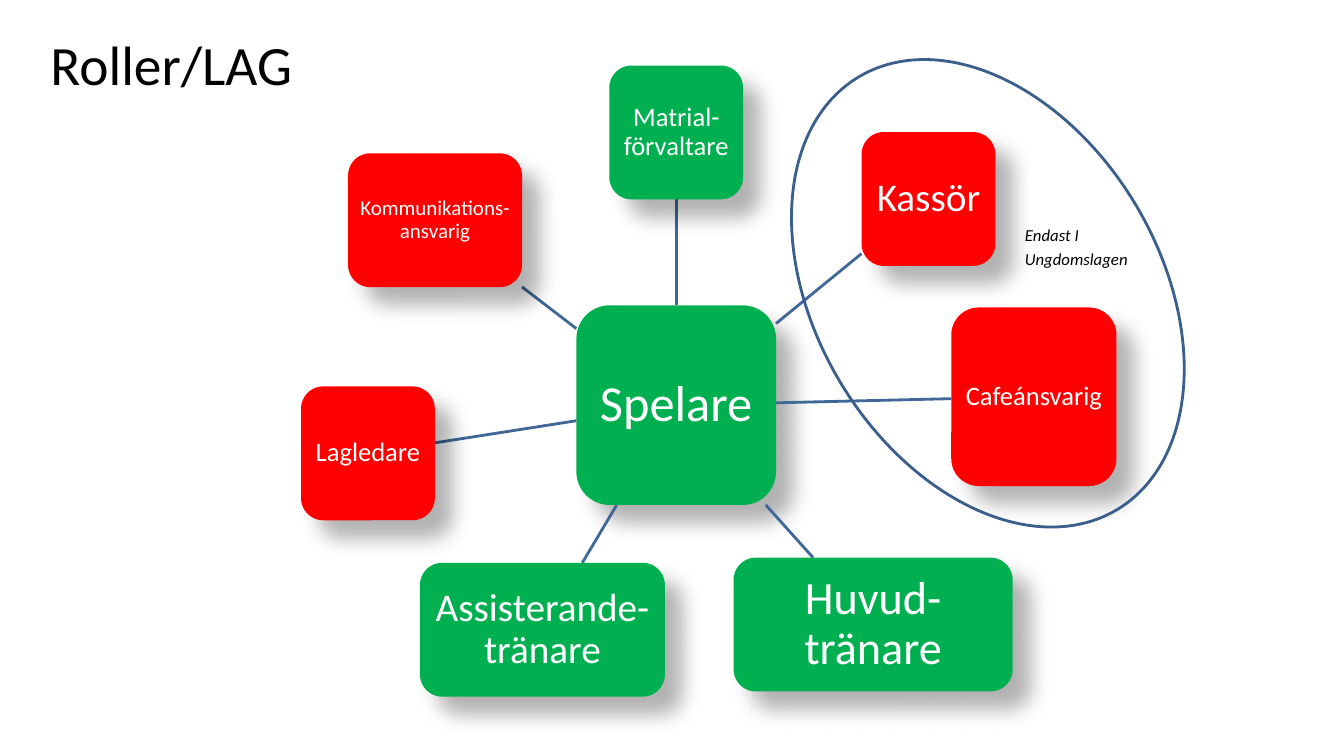
from lxml import etree
from pptx import Presentation
from pptx.dml.color import RGBColor
from pptx.enum import shapes, text
from pptx.oxml import parse_xml
from pptx.oxml.ns import nsdecls, qn
from pptx.util import Pt

COLORS = {
    "green": "00B050",
    "red": "FF0000",
    "link": "3F6797",
    "ring": "3A5F8C",
    "white": "FFFFFF",
    "black": "000000",
}
SHADOW = (
    f'<a:effectLst {nsdecls("a")}>'
    f'<a:outerShdw blurRad="{Pt(15)}" dist="{Pt(18)}" dir="2700000" algn="tl" rotWithShape="0">'
    f'<a:srgbClr val="{COLORS["black"]}"><a:alpha val="30000"/></a:srgbClr>'
    "</a:outerShdw></a:effectLst>"
)


def add_words(paragraph, words, size, color, italic=None):
    run = paragraph.add_run()
    run.text = words
    run.font.name = "Calibri"
    run.font.size = Pt(size)
    run.font.italic = italic
    run.font.color.rgb = RGBColor.from_string(COLORS[color])


def add_role(words, left, top, width, height, size, color):
    role = slide.shapes.add_shape(
        shapes.MSO_SHAPE.ROUNDED_RECTANGLE, Pt(left), Pt(top), Pt(width), Pt(height)
    )
    role.fill.solid()
    role.fill.fore_color.rgb = RGBColor.from_string(COLORS[color])
    role.line.fill.background()
    role._element.spPr.append(parse_xml(SHADOW))
    frame = role.text_frame
    frame.word_wrap = True
    frame.vertical_anchor = text.MSO_ANCHOR.MIDDLE
    inset = Pt(size / 5)
    frame.margin_left = frame.margin_right = inset
    frame.margin_top = frame.margin_bottom = inset
    label = frame.paragraphs[0]
    label.alignment = text.PP_ALIGN.CENTER
    label.line_spacing = 0.9
    add_words(label, words, size, "white")


presentation = Presentation()
presentation.slide_width = Pt(960)
presentation.slide_height = Pt(540)
slide = presentation.slides.add_slide(presentation.slide_layouts[5])

heading = slide.shapes.title
heading.left, heading.top, heading.width, heading.height = Pt(28.8), Pt(0), Pt(193.7), Pt(90)
heading.text_frame.vertical_anchor = text.MSO_ANCHOR.MIDDLE
heading.text_frame.paragraphs[0].alignment = text.PP_ALIGN.LEFT
add_words(heading.text_frame.paragraphs[0], "Roller/LAG", 39.6, "black")

center_x, center_y, player_side = 483, 289.4, 142.6
add_role(
    "Spelare", center_x - player_side / 2, center_y - player_side / 2,
    player_side, player_side, 36, "green",
)

role_height = 95.6
roles = [
    ("Matrial-förvaltare", 435.2, 46.8, 95.6, role_height, 19, "green"),
    ("Kassör", 615.4, 94.3, 95.6, role_height, 28, "red"),
    ("Cafeánsvarig", 679.5, 219.6, 118, 127.6, 19, "red"),
    ("Huvud-tränare", 524, 398.3, 199.4, role_height, 33, "green"),
    ("Assisterande-tränare", 300, 402, 175, role_height, 28, "green"),
    ("Lagledare", 215, 276, 95.6, role_height, 19, "red"),
    ("Kommunikations-ansvarig", 248.6, 109.5, 124.3, role_height, 15, "red"),
]
for words, left, top, width, height, size, color in roles:
    dx = left + width / 2 - center_x
    dy = top + height / 2 - center_y
    reach_x, reach_y = max(abs(dx), 0.01), max(abs(dy), 0.01)
    start = min(player_side / 2 / reach_x, player_side / 2 / reach_y)
    end = 1 - min(width / 2 / reach_x, height / 2 / reach_y)
    link = slide.shapes.add_connector(
        shapes.MSO_CONNECTOR.STRAIGHT,
        Pt(center_x + dx * start), Pt(center_y + dy * start),
        Pt(center_x + dx * end), Pt(center_y + dy * end),
    )
    link.line.color.rgb = RGBColor.from_string(COLORS["link"])
    link.line.width = Pt(2)
    etree.SubElement(link._element.spPr, qn("a:effectLst"))
    add_role(words, left, top, width, height, size, color)

youth_ring = slide.shapes.add_shape(
    shapes.MSO_SHAPE.OVAL, Pt(582.5), Pt(29.5), Pt(246.2), Pt(360)
)
youth_ring.rotation = 149.2
youth_ring.shadow.inherit = False
youth_ring.fill.background()
youth_ring.line.color.rgb = RGBColor.from_string(COLORS["ring"])
youth_ring.line.width = Pt(2)

youth_note = slide.shapes.add_textbox(Pt(725), Pt(157), Pt(187.2), Pt(176.4)).text_frame
youth_note.word_wrap = True
add_words(youth_note.paragraphs[0], "Endast I", 12, "black", True)
second_line = youth_note.add_paragraph()
second_line.space_before = Pt(2.4)
add_words(second_line, "Ungdomslagen", 12, "black", True)

presentation.save("out.pptx")
